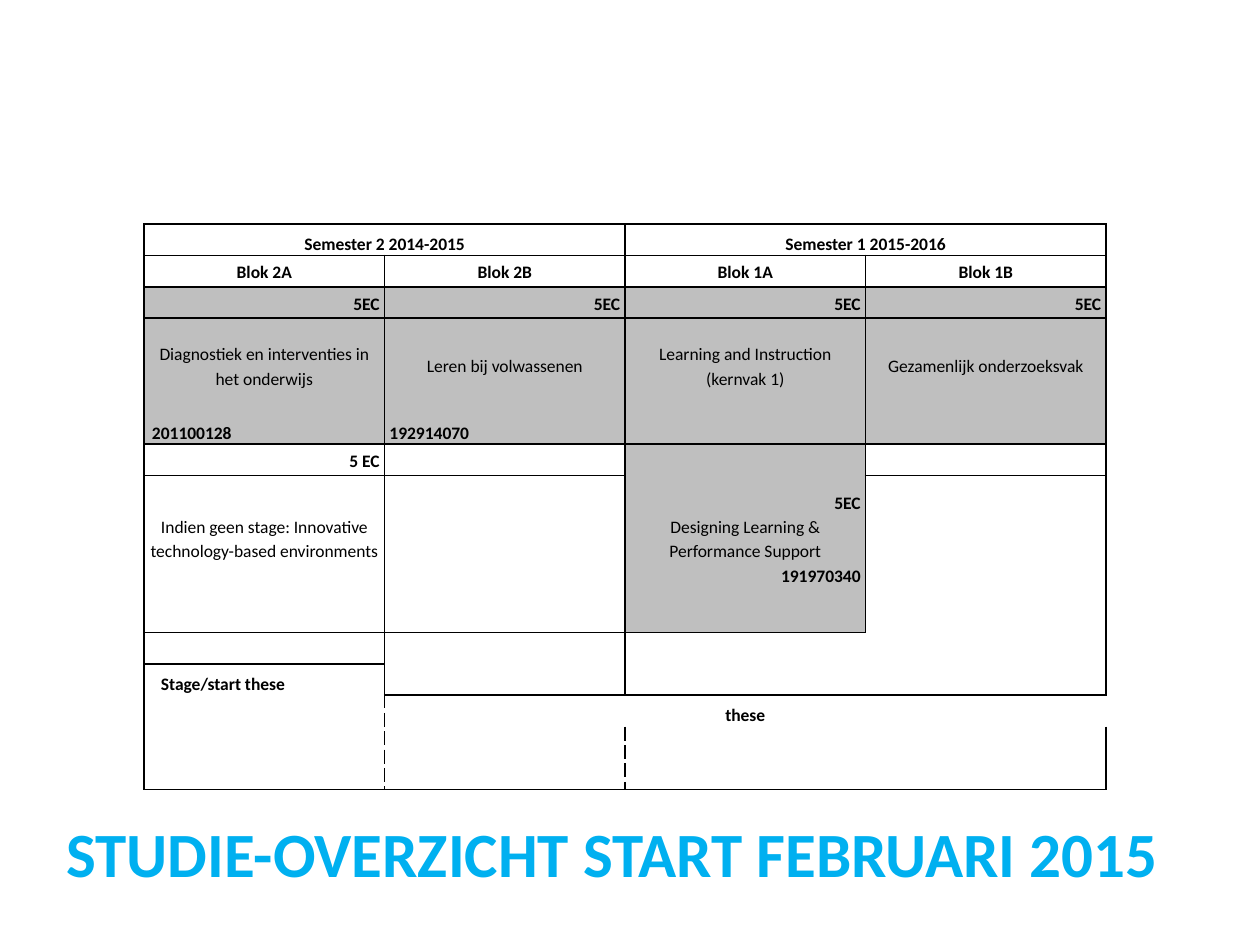
from lxml.etree import SubElement
from pptx import Presentation
from pptx.dml.color import RGBColor
from pptx.enum.text import MSO_ANCHOR as Anchor, PP_ALIGN as Align
from pptx.oxml.ns import qn
from pptx.util import Emu, Pt

PX = 914400 // 126
COLORS = {"title": "00B0F0", "text": "000000", "line": "000000", "gray": "BFBFBF"}
NO_STYLE = "{2D5ABB26-0587-4C30-8999-92F81FD0307C}"
LEFT, CENTER, RIGHT = Align.LEFT, Align.CENTER, Align.RIGHT

ROW_UNITS = [1, 1, 1, 3, 1, 1, 4, 1, 1, 1, 1, 1, 1]
MERGES = [
    (0, 0, 0, 1), (0, 2, 0, 3), (5, 2, 7, 2),
    (8, 1, 9, 1), (8, 2, 9, 2), (8, 3, 9, 3), (10, 1, 10, 3),
]
# Upper case marks a solid edge, lower case a dashed one.
EDGES = [
    ["LRTB"] * 4,
    ["LRTB"] * 4,
    ["LRT"] * 4,
    ["LR"] * 4,
    ["LRB"] * 4,
    ["LRT", "LRT", "LRTB", "LRT"],
    ["LR"] * 4,
    ["LRB", "LRB", "LRB", "LR"],
    ["LRT", "LT", "T", "R"],
    ["LR", "L", "", "R"],
    ["Lr", "l", "", "R"],
    ["Lr", "l", "", "R"],
    ["LrB", "lB", "B", "RB"],
]
GRAY_CELLS = {(row, column) for row in (2, 3, 4) for column in range(4)} | {(5, 2)}


class SlideBuilder:
    font_name = "Calibri"

    def __init__(self, presentation):
        self.slide = presentation.slides.add_slide(presentation.slide_layouts[6])

    def px(self, value):
        return Emu(value * PX)

    def color(self, name):
        return RGBColor.from_string(COLORS[name])

    def run(self, paragraph, text, size, bold, color="text"):
        run = paragraph.add_run()
        run.text = text
        run.font.name = self.font_name
        run.font.size = Pt(size)
        run.font.bold = bold
        run.font.color.rgb = self.color(color)

    def title(self, text, left, top, width, height):
        box = self.slide.shapes.add_textbox(*map(self.px, (left, top, width, height)))
        frame = box.text_frame
        frame.word_wrap = True
        frame.vertical_anchor = Anchor.TOP
        frame.margin_top = self.px(9)
        self.run(frame.paragraphs[0], text, 36, True, "title")

    def table(self, left, top, width, height, row_units, columns):
        shape = self.slide.shapes.add_table(
            len(row_units), columns, *map(self.px, (left, top, width, height)))
        table = shape.table
        table.first_row = table.horz_banding = False
        table._tbl.tblPr.find(qn("a:tableStyleId")).text = NO_STYLE
        for column in table.columns:
            column.width = self.px(width) // columns
        for row, units in zip(table.rows, row_units):
            row.height = self.px(height) * units // sum(row_units)
        return table

    def border(self, cell, edges):
        properties = cell._tc.get_or_add_tcPr()
        for edge in sorted(edges, key=lambda letter: "LRTB".index(letter.upper())):
            line = SubElement(properties, qn(f"a:ln{edge.upper()}"), w=str(Pt(1)))
            fill = SubElement(line, qn("a:solidFill"))
            SubElement(fill, qn("a:srgbClr"), val=COLORS["line"])
            SubElement(line, qn("a:prstDash"), val="dash" if edge.islower() else "solid")

    def cell(self, cell, edges, gray):
        cell.margin_left = cell.margin_right = self.px(5)
        cell.margin_top = cell.margin_bottom = 0
        self.border(cell, edges)
        if gray:
            cell.fill.solid()
            cell.fill.fore_color.rgb = self.color("gray")
        else:
            cell.fill.background()

    def empty(self, cell):
        SubElement(cell.text_frame.paragraphs[0]._p, qn("a:endParaRPr"), sz="1000")

    def text(self, cell, lines, anchor=Anchor.MIDDLE, indent=0):
        cell.vertical_anchor = anchor
        cell.margin_left = self.px(5 + indent)
        frame = cell.text_frame
        for index, (text, align, bold) in enumerate(lines):
            paragraph = frame.add_paragraph() if index else frame.paragraphs[0]
            paragraph.alignment = align
            paragraph.line_spacing = 1.15
            self.run(paragraph, text, 10, bold)


def cell_texts():
    bottom = {"anchor": Anchor.BOTTOM}
    texts = {
        (0, 0): ([("Semester 2 2014-2015", CENTER, True)], bottom),
        (0, 2): ([("Semester 1 2015-2016", CENTER, True)], bottom),
        (3, 0): ([("Diagnostiek en interventies in het onderwijs", CENTER, False)], {}),
        (3, 1): ([("Leren bij volwassenen", CENTER, False)], {}),
        (3, 2): ([("Learning and Instruction", CENTER, False),
                  ("(kernvak 1)", CENTER, False)], {}),
        (3, 3): ([("Gezamenlijk onderzoeksvak", CENTER, False)], {}),
        (4, 0): ([("201100128", LEFT, True)], {**bottom, "indent": 3}),
        (4, 1): ([("192914070", LEFT, True)], bottom),
        (5, 0): ([("5 EC", RIGHT, True)], {}),
        (5, 2): ([("5EC", RIGHT, True),
                  ("Designing Learning & Performance Support", CENTER, False),
                  ("191970340", RIGHT, True)], {}),
        (6, 0): ([("Indien geen stage: Innovative technology-based environments",
                   CENTER, False)], {}),
        (9, 0): ([("Stage/start these", LEFT, True)], {**bottom, "indent": 12}),
        (10, 1): ([("these", CENTER, True)], bottom),
    }
    for column, block in enumerate(("2A", "2B", "1A", "1B")):
        texts[1, column] = ([(f"Blok {block}", CENTER, True)], {})
        texts[2, column] = ([("5EC", RIGHT, True)], {})
    return texts


def main():
    presentation = Presentation()
    presentation.slide_width = Emu(1260 * PX)
    presentation.slide_height = Emu(945 * PX)
    builder = SlideBuilder(presentation)
    builder.title("STUDIE-OVERZICHT START FEBRUARI 2015", 54, 806, 1142, 83)

    table = builder.table(144, 224, 962, 566, ROW_UNITS, 4)
    texts = cell_texts()
    for row, row_edges in enumerate(EDGES):
        for column, edges in enumerate(row_edges):
            cell = table.cell(row, column)
            builder.cell(cell, edges, (row, column) in GRAY_CELLS)
            if (row, column) in texts:
                lines, options = texts[row, column]
                builder.text(cell, lines, **options)
            else:
                builder.empty(cell)
    for top, left, bottom, right in MERGES:
        table.cell(top, left).merge(table.cell(bottom, right))

    presentation.save("out.pptx")


if __name__ == "__main__":
    main()
